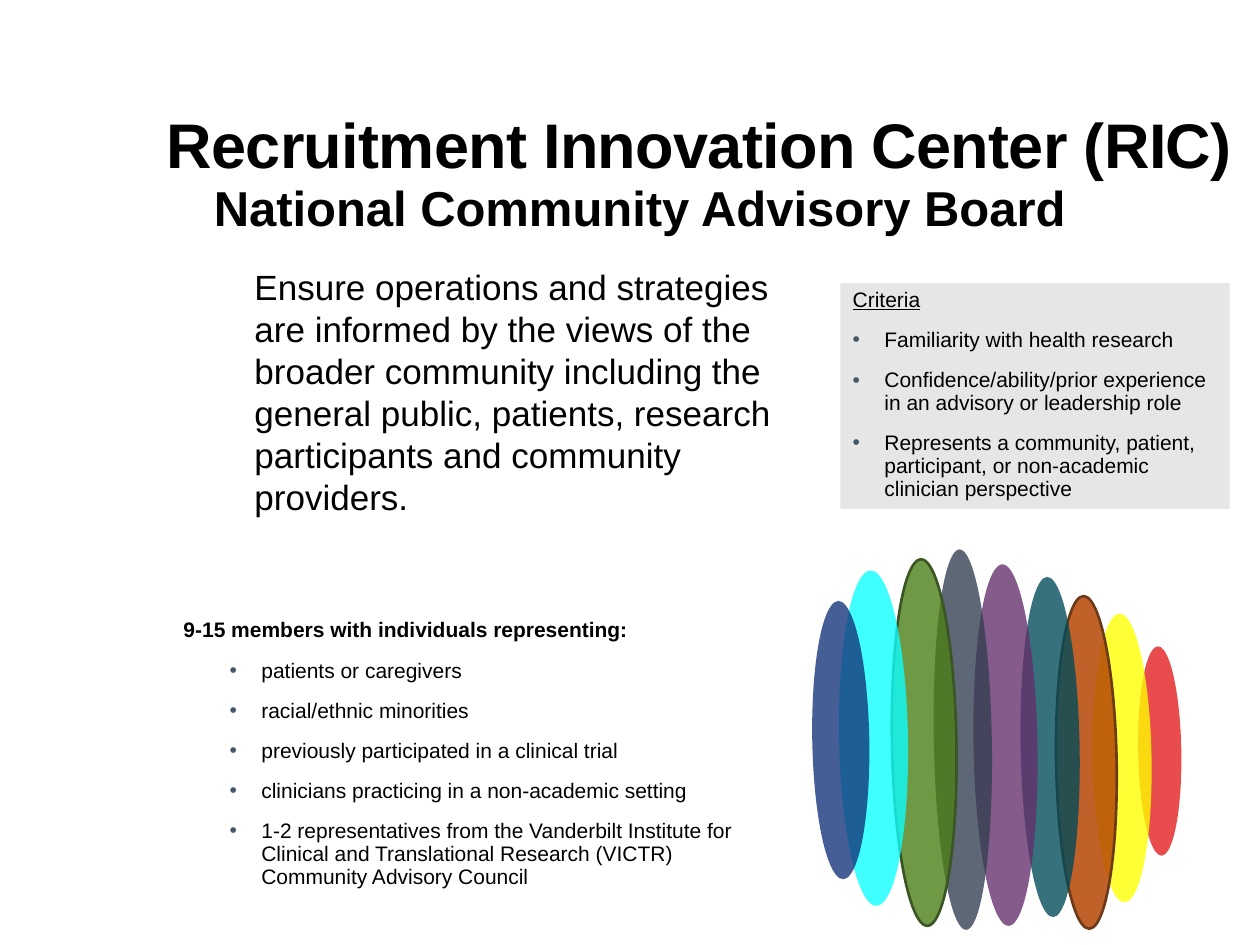
from lxml import etree
from pptx import Presentation
from pptx import util as u
from pptx.dml.color import RGBColor
from pptx.enum import shapes, text
from pptx.oxml.ns import qn

BULLET_COLOR = "44546A"
INK = "000000"


def rgb(value):
    return RGBColor.from_string(value)


def write(paragraph, words, size=12, bold=False, underline=False, color=INK,
          line=0.9, before=0, left=0, hanging=0, bullet=False, tracking=0):
    properties = paragraph._p.get_or_add_pPr()
    properties.set("marL", str(u.Cm(left)))
    properties.set("indent", str(-u.Cm(hanging)))
    if bullet:
        tint = etree.SubElement(properties, qn("a:buClr"))
        etree.SubElement(tint, qn("a:srgbClr"), val=BULLET_COLOR)
        etree.SubElement(properties, qn("a:buFont"), typeface="Arial")
        etree.SubElement(properties, qn("a:buChar"), char="•")
    paragraph.alignment = text.PP_ALIGN.LEFT
    paragraph.line_spacing = line
    paragraph.space_before = u.Pt(before)
    run = paragraph.add_run()
    run.text = words
    run.font.name = "Arial"
    run.font.size = u.Pt(size)
    run.font.bold = bold
    run.font.underline = underline
    run.font.color.rgb = rgb(color)
    if tracking:
        run._r.get_or_add_rPr().set("spc", str(int(tracking * 100)))


class Deck:
    def __init__(self, width, height):
        self.file = Presentation()
        self.file.slide_width, self.file.slide_height = u.Cm(width), u.Cm(height)
        self.slide = self.file.slides.add_slide(self.file.slide_layouts[6])

    def box(self, left, top, width, height, anchor=text.MSO_ANCHOR.TOP):
        area = self.slide.shapes.add_textbox(*map(u.Cm, (left, top, width, height)))
        area.text_frame.word_wrap = True
        area.text_frame.vertical_anchor = anchor
        return area.text_frame

    def form(self, kind, left, top, width, height, fill):
        shape = self.slide.shapes.add_shape(kind, *map(u.Cm, (left, top, width, height)))
        shape.shadow.inherit = False
        shape.fill.solid()
        shape.fill.fore_color.rgb = rgb(fill)
        shape.line.fill.background()
        return shape

    def panel(self, left, top, width, height, fill):
        frame = self.form(shapes.MSO_SHAPE.RECTANGLE, left, top, width, height, fill).text_frame
        frame.word_wrap = True
        frame.vertical_anchor = text.MSO_ANCHOR.TOP
        return frame

    def petal(self, center_x, center_y, width, height, fill, opacity=79, rim=None):
        petal = self.form(shapes.MSO_SHAPE.OVAL, center_x - width / 2,
                          center_y - height / 2, width, height, fill)
        petal.rotation = 359
        color = petal._element.spPr.find(".//" + qn("a:srgbClr"))
        etree.SubElement(color, qn("a:alpha"), val=str(opacity * 1000))
        if rim:
            petal.line.color.rgb = rgb(rim)
            petal.line.width = u.Pt(1.5)

    def listing(self, frame, heading, items, item_left, **heading_style):
        write(frame.paragraphs[0], heading, **heading_style)
        for item in items:
            write(frame.add_paragraph(), item, before=10, left=item_left,
                  hanging=0.64, bullet=True)


def main():
    deck = Deck(25.4, 19.05)

    board = deck.box(4.06, 1.22, 20.73, 3.68, text.MSO_ANCHOR.BOTTOM)
    write(board.paragraphs[0], "National Community Advisory Board", size=28, bold=True)

    center = deck.box(3.18, 0.74, 22.48, 3.02, text.MSO_ANCHOR.BOTTOM)
    center.margin_left = center.margin_right = u.Cm(0.18)
    center.margin_top = center.margin_bottom = u.Cm(0.1)
    write(center.paragraphs[0], "Recruitment Innovation Center (RIC)", size=36,
          bold=True, line=0.85, tracking=-0.4)

    mission = deck.box(4.88, 5.23, 11.89, 6.86)
    write(mission.paragraphs[0],
          "Ensure operations and strategies are informed by the views of the broader "
          "community including the general public, patients, research participants "
          "and community providers.", size=20, line=1.0)

    petals = [
        (23.38, 15.14, 0.87, 4.22, "E21C1C"),
        (22.62, 15.28, 1.19, 5.82, "FFFF00"),
        (21.9, 15.37, 1.22, 6.71, "B54605", 85, "6B3A18"),
        (21.17, 15.06, 1.19, 6.86, "004B5A"),
        (20.27, 15.02, 1.29, 7.29, "642F6C"),
        (19.41, 14.91, 1.17, 7.67, "333F50"),
        (18.63, 14.97, 1.3, 7.39, "497E14", 79, "3C5524"),
        (17.61, 14.88, 1.39, 6.76, "0DFFFF"),
        (16.95, 14.92, 1.15, 5.61, "15347A"),
    ]
    for petal in petals:
        deck.petal(*petal)

    members = deck.box(3.12, 12.37, 12.78, 5.82)
    deck.listing(members, "9-15 members with individuals representing:", [
        "patients or caregivers",
        "racial/ethnic minorities",
        "previously participated in a clinical trial",
        "clinicians practicing in a non-academic setting",
        "1-2 representatives from the Vanderbilt Institute for Clinical and "
        "Translational Research (VICTR) Community Advisory Council",
    ], 1.9, bold=True, left=0.33)

    criteria = deck.panel(16.94, 5.71, 7.85, 4.55, "E7E6E6")
    deck.listing(criteria, "Criteria", [
        "Familiarity with health research",
        "Confidence/ability/prior experience in an advisory or leadership role",
        "Represents a community, patient, participant, or non-academic "
        "clinician perspective",
    ], 0.64, underline=True)

    deck.file.save("out.pptx")


if __name__ == "__main__":
    main()
